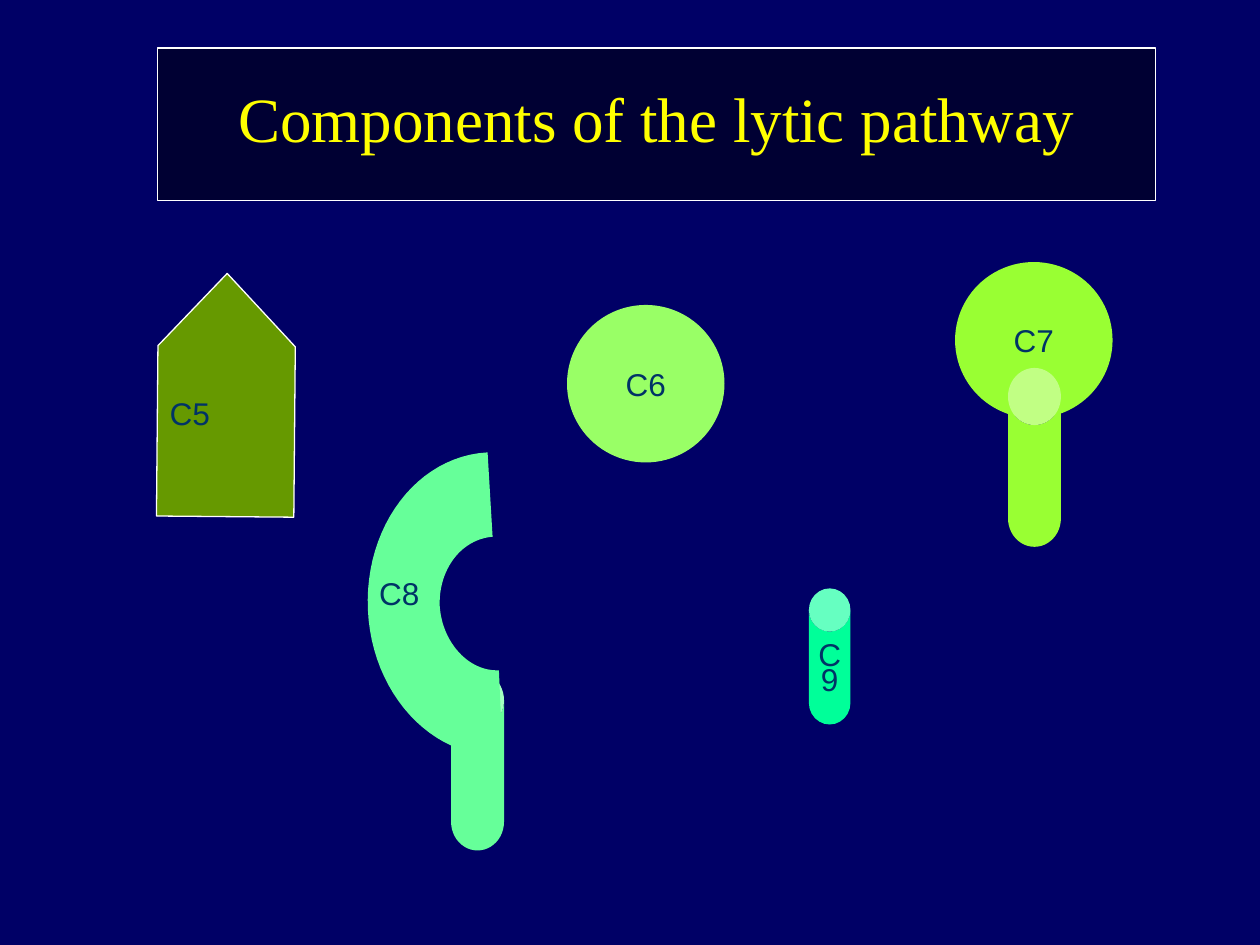
from pptx import Presentation
from pptx.dml.color import RGBColor
from pptx.enum.shapes import MSO_SHAPE
from pptx.enum.text import MSO_ANCHOR, MSO_AUTO_SIZE, PP_ALIGN
from pptx.util import Inches, Pt

CENTER, LEFT = PP_ALIGN.CENTER, PP_ALIGN.LEFT
MIDDLE = MSO_ANCHOR.MIDDLE
NO_AUTOFIT = MSO_AUTO_SIZE.NONE
OVAL, CAN, PENTAGON = MSO_SHAPE.OVAL, MSO_SHAPE.CAN, MSO_SHAPE.PENTAGON

THEME = {
    "background": "000066", "title_fill": "000033", "title": "FFFF00",
    "outline": "FFFFFF", "label": "003366",
    "title_font": "Times New Roman", "label_font": "Arial",
    "title_size": 36, "label_size": 18, "outline_width": 0.75,
}

# Content: geometry in inches, back to front
TITLE = ("Components of the lytic pathway", (1.25, 0.38, 7.92, 1.21))
C5 = dict(kind=PENTAGON, box=(0.83, 2.59, 1.93, 1.09), fill="669900",
          adj=0.53, lines=["C5"], outlined=True, rotation=270.5)
C6 = dict(kind=OVAL, box=(4.5, 2.42, 1.25, 1.25), fill="99FF66", lines=["C6"])
C7_HEAD = dict(kind=OVAL, box=(7.58, 2.08, 1.25, 1.24), fill="99FF33", lines=["C7"])
C7_STEM = dict(kind=CAN, box=(8, 2.92, 0.42, 1.42), fill="99FF33", adj=1.08)
C8_STEM = dict(kind=CAN, box=(3.58, 5.33, 0.42, 1.42), fill="66FF99", adj=1.08)
C9 = dict(kind=CAN, box=(6.42, 4.67, 0.33, 1.08), fill="00FF99", adj=1.04,
          lines=["C", "9"], spacings=(0.8, 0.1))

# C8 arch: inner and outer edges, each as two cubic curves
C8_INNER = [(3.96, 5.32), (3.72, 5.33), (3.51, 5.1), (3.49, 4.81),
            (3.48, 4.52), (3.66, 4.28), (3.91, 4.26)]
C8_OUTER = [(3.87, 3.59), (3.31, 3.62), (2.89, 4.18), (2.92, 4.84),
            (2.95, 5.5), (3.42, 6.02), (3.99, 6)]
CURVE_STEPS = 24


def color(name):
    return RGBColor.from_string(THEME.get(name, name))


def write(shape, lines, role="label", align=CENTER, spacings=(), before=9,
          wrap=False, insets=(0.1, 0.05, 0.1, 0.05)):
    frame = shape.text_frame
    frame.auto_size, frame.word_wrap = NO_AUTOFIT, wrap
    frame.vertical_anchor = MIDDLE
    (frame.margin_left, frame.margin_top,
     frame.margin_right, frame.margin_bottom) = map(Inches, insets)
    for i, line in enumerate(lines):
        paragraph = frame.paragraphs[0] if i == 0 else frame.add_paragraph()
        paragraph.alignment, paragraph.space_before = align, Pt(before)
        if spacings:
            paragraph.line_spacing = spacings[i]
        run = paragraph.add_run()
        run.text = line
        run.font.name = THEME[role + "_font"]
        run.font.size = Pt(THEME[role + "_size"])
        run.font.color.rgb = color(role)


def paint(shape, fill, outlined=False):
    shape.fill.solid()
    shape.fill.fore_color.rgb = color(fill)
    if outlined:
        shape.line.color.rgb = color("outline")
        shape.line.width = Pt(THEME["outline_width"])
    else:
        shape.line.fill.background()


def add_component(slide, kind, box, fill, adj=None, lines=(), spacings=(),
                  outlined=False, rotation=0):
    part = slide.shapes.add_shape(kind, *map(Inches, box))
    part.shadow.inherit = False
    part.rotation = rotation
    if adj is not None:
        part.adjustments[0] = adj
    paint(part, fill, outlined)
    if lines:
        write(part, lines, spacings=spacings, before=0 if rotation else 9)
    if rotation:  # vertical text keeps the label upright
        part.text_frame._txBody.bodyPr.set("vert", "eaVert")


def curve_points(controls):
    points = [controls[0]]
    for start in range(0, len(controls) - 1, 3):
        a, b, c, d = controls[start:start + 4]
        for step in range(1, CURVE_STEPS + 1):
            t = step / CURVE_STEPS
            u = 1 - t
            points.append(tuple(
                u**3 * a[k] + 3 * u*u*t * b[k] + 3 * u*t*t * c[k] + t**3 * d[k]
                for k in (0, 1)))
    return points


def add_arch(slide):
    outline = [(Inches(x), Inches(y))
               for x, y in curve_points(C8_INNER) + curve_points(C8_OUTER)]
    builder = slide.shapes.build_freeform(*outline[0])
    builder.add_line_segments(outline[1:], close=True)
    arch = builder.convert_to_shape()
    arch.shadow.inherit = False
    paint(arch, C8_STEM["fill"])
    write(arch, ["C8"], align=LEFT, insets=(0.09, 0, 0, 0.18))


def main():
    deck = Presentation()
    deck.slide_width, deck.slide_height = Inches(10), Inches(7.5)
    slide = deck.slides.add_slide(deck.slide_layouts[5])
    slide.background.fill.solid()
    slide.background.fill.fore_color.rgb = color("background")

    # Title
    text, box = TITLE
    title = slide.shapes.title
    title.left, title.top, title.width, title.height = map(Inches, box)
    paint(title, "title_fill", outlined=True)
    write(title, [text], role="title", spacings=(0.8,), before=0, wrap=True)

    # Complement components
    for component in (C6, C9, C8_STEM):
        add_component(slide, **component)
    add_arch(slide)
    for component in (C7_HEAD, C7_STEM, C5):
        add_component(slide, **component)

    deck.save("out.pptx")


if __name__ == "__main__":
    main()
